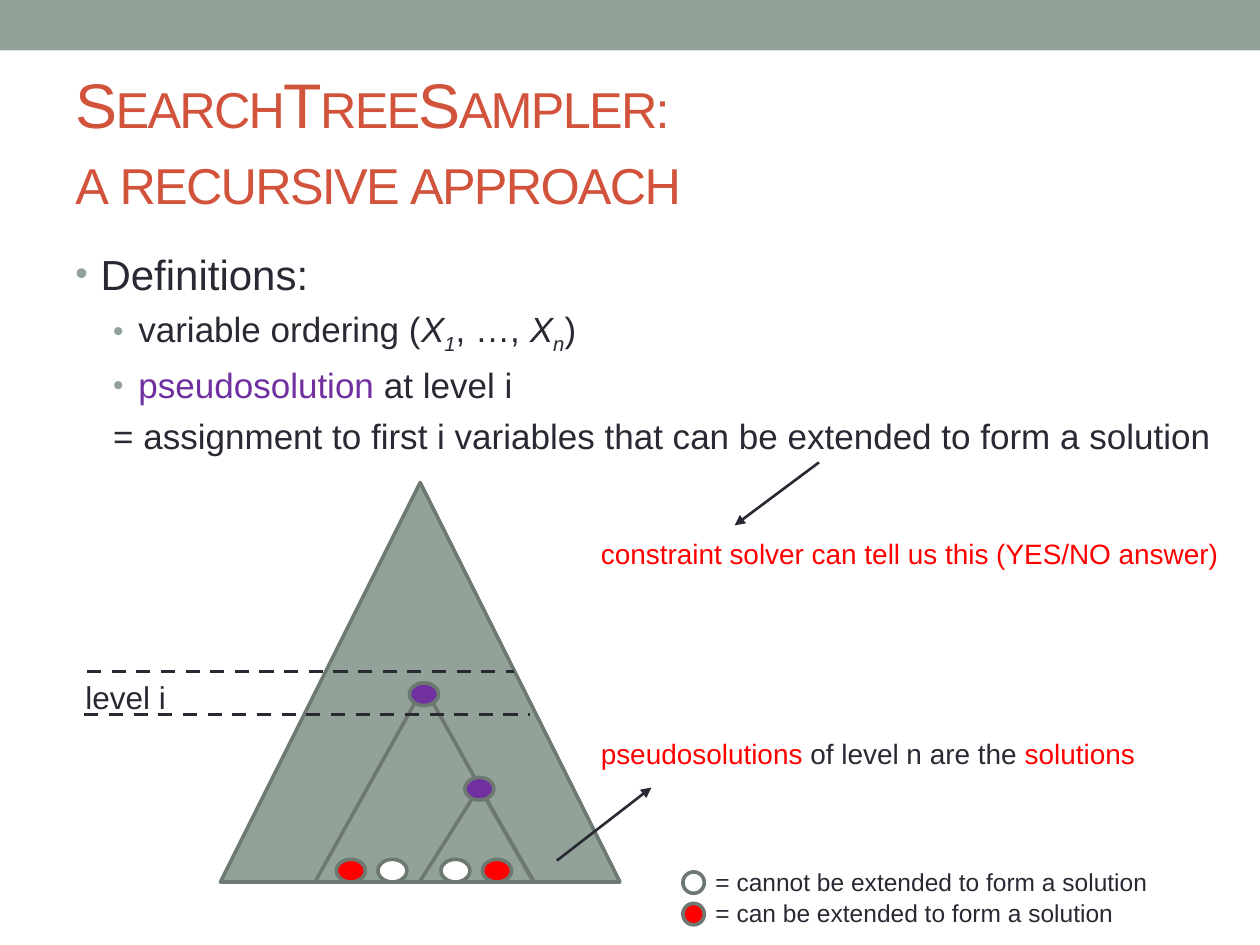
from lxml import etree
from pptx import Presentation
from pptx.dml.color import RGBColor
from pptx.enum.dml import MSO_LINE
from pptx.enum.shapes import MSO_CONNECTOR, MSO_SHAPE
from pptx.enum.text import MSO_ANCHOR
from pptx.oxml.ns import qn
from pptx.util import Inches, Pt

RECT = MSO_SHAPE.RECTANGLE
TRI = MSO_SHAPE.ISOSCELES_TRIANGLE
OVAL = MSO_SHAPE.OVAL
STRAIGHT = MSO_CONNECTOR.STRAIGHT
DASH = MSO_LINE.DASH
MIDDLE = MSO_ANCHOR.MIDDLE

SAGE, EDGE, INK, RUST = "93A299", "6D7871", "292934", "D2533C"
RED, WHITE, PURPLE = "FF0000", "FFFFFF", "7030A0"


def color(code):
    return RGBColor.from_string(code)


def node(parent, tag, **attrs):
    child = etree.SubElement(parent, qn(tag))
    for key, value in attrs.items():
        child.set(key, str(value))
    return child


class Board:
    font = "Arial"

    def __init__(self, slide):
        self.slide = slide
        self.shapes = slide.shapes

    def shape(self, kind, x, y, w, h, fill, edge=EDGE, alpha=None):
        item = self.shapes.add_shape(kind, *map(Inches, (x, y, w, h)))
        item.shadow.inherit = False
        item.fill.solid()
        item.fill.fore_color.rgb = color(fill)
        if alpha:
            tint = item._element.spPr.find(qn("a:solidFill"))[0]
            node(tint, "a:alpha", val=alpha * 1000)
        if edge:
            item.line.color.rgb = color(edge)
            item.line.width = Pt(2.08)
        else:
            item.line.fill.background()
        return item

    def dot(self, x, y, fill, w=0.23, h=0.18):
        return self.shape(OVAL, x, y, w, h, fill)

    def line(self, x1, y1, x2, y2, width, dash=None, arrow=False):
        item = self.shapes.add_connector(
            STRAIGHT, *map(Inches, (x1, y1, x2, y2)))
        item.line.color.rgb = color(INK)
        item.line.width = Pt(width)
        if dash:
            item.line.dash_style = dash
        props = item._element.spPr
        if arrow:
            node(props.find(qn("a:ln")), "a:tailEnd", type="triangle")
        node(props, "a:effectLst")

    def box(self, x, y, w, h):
        frame = self.shapes.add_textbox(
            *map(Inches, (x, y, w, h))).text_frame
        frame.word_wrap = True
        return frame

    def put(self, para, size, *parts):
        """Each part is (text, colour) or (text, colour, italic, baseline)."""
        para.font.size = Pt(size)
        para.font.name = self.font
        for text, hue, *extra in parts:
            run = para.add_run()
            run.text = text
            run.font.color.rgb = color(hue)
            if extra:
                run.font.italic, base = extra
                if base:
                    run._r.get_or_add_rPr().set("baseline", str(base * 1000))

    def label(self, x, y, w, h, size, *parts):
        self.put(self.box(x, y, w, h).paragraphs[0], size, *parts)

    def title(self, x, y, w, h, size, lines):
        frame = self.box(x, y, w, h)
        frame.vertical_anchor = MIDDLE
        para = frame.paragraphs[0]
        for i, text in enumerate(lines):
            if i:
                para.add_line_break()
            self.put(para, size, (text, RUST))
        for run in para.runs:
            props = run._r.get_or_add_rPr()
            props.set("cap", "small")
            props.set("spc", "-100")

    def bullets(self, x, y, w, h, items):
        frame = self.box(x, y, w, h)
        for i, (left, size, mark, parts) in enumerate(items):
            para = frame.add_paragraph() if i else frame.paragraphs[0]
            para.space_before = Pt(5)
            self.put(para, size, *parts)
            props = para._p.get_or_add_pPr()
            props.set("marL", str(Inches(left)))
            props.set("indent", str(Inches(-0.2)))
            # Bullet settings go ahead of the default run properties
            if mark:
                tint = node(props, "a:buClr")
                node(tint, "a:srgbClr", val=SAGE)
                marks = [tint, node(props, "a:buSzPct", val=85000),
                         node(props, "a:buFont", typeface=self.font),
                         node(props, "a:buChar", char=mark)]
            else:
                marks = [node(props, "a:buNone")]
            fonts = props.find(qn("a:defRPr"))
            for item in marks:
                fonts.addprevious(item)


def main():
    deck = Presentation()
    deck.slide_width, deck.slide_height = Inches(10), Inches(7.5)
    board = Board(deck.slides.add_slide(deck.slide_layouts[6]))

    # Top band and heading
    board.shape(RECT, 0, 0, 10, 0.4, SAGE, edge=None)
    board.title(0.5, 0.58, 9.25, 1.08, 36,
                ["SearchTreeSampler: ", "a recursive approach"])

    # Definitions
    board.bullets(0.5, 1.92, 9.5, 3.33, [
        (0.2, 24, "•", [("Definitions:", INK)]),
        (0.5, 20, "•", [
            ("variable ordering (", INK),
            ("X", INK, True, 0), ("1", INK, True, -25),
            (", …, ", INK),
            ("X", INK, True, 0), ("n", INK, True, -25),
            (")", INK)]),
        (0.5, 20, "•", [("pseudosolution", PURPLE), (" at level i", INK)]),
        (0.5, 20, None, [("= assignment to first i variables that can be "
                          "extended to form a solution", INK)]),
    ])

    # Search tree with nested subtrees
    board.shape(TRI, 1.75, 3.83, 3.17, 3.17, SAGE)
    board.shape(TRI, 2.5, 5.45, 1.73, 1.55, SAGE, alpha=46)
    inner = board.shape(TRI, 3.33, 6.25, 0.91, 0.75, SAGE, alpha=46)
    inner.adjustments[0] = 0.52

    # Tree nodes and leaves
    for x, y in ((3.25, 5.42), (3.69, 6.17)):
        board.dot(x, y, PURPLE)
    for x, fill in ((2.67, RED), (3, WHITE), (3.5, WHITE), (3.83, RED)):
        board.dot(x, 6.82, fill)

    # Level i
    board.line(0.69, 5.33, 4.08, 5.33, 2, dash=DASH)
    board.line(0.67, 5.67, 4.21, 5.67, 2, dash=DASH)
    board.label(0.58, 5.33, 2.94, 0.4, 18, ("level i", INK))

    # Remarks with arrows
    board.line(6.5, 3.67, 5.83, 4.17, 1.5, arrow=True)
    board.label(4.67, 4.21, 5.25, 0.37, 16,
                ("constraint solver can tell us this (YES/NO answer)", RED))
    board.line(4.42, 6.83, 5.17, 6.25, 1.5, arrow=True)
    board.label(4.67, 5.8, 4.5, 0.37, 16, ("pseudosolutions", RED),
                (" of level n are the ", INK), ("solutions", RED))

    # Legend
    for y, fill, verb in ((6.83, WHITE, "cannot"), (7.08, RED, "can")):
        board.dot(5.42, y + 0.09, fill, 0.17, 0.17)
        board.label(5.58, y, 4.5, 0.34, 14,
                    (f"= {verb} be extended to form a solution", INK))

    deck.save("out.pptx")


if __name__ == "__main__":
    main()
